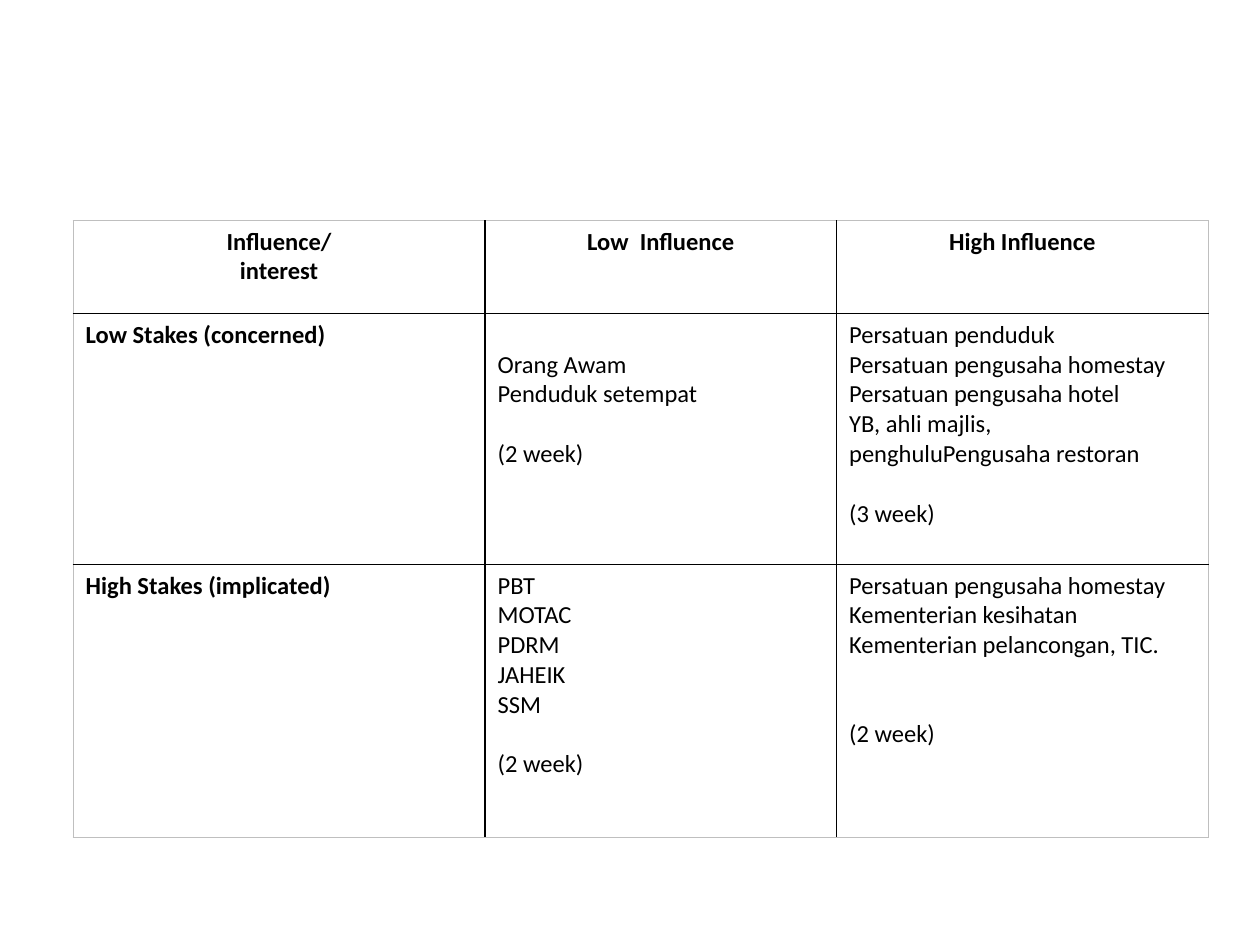
from lxml import etree
from pptx import Presentation
from pptx import util as u
from pptx.dml.color import RGBColor
from pptx.enum import text
from pptx.oxml import ns

BLACK = RGBColor(0, 0, 0)
GREY = RGBColor(0xBF, 0xBF, 0xBF)
FONT = {"name": "Calibri", "size": u.Pt(14)}
LINE = 17
HANG = u.Inches(0.38)

COLS = [3.27, 2.79, 2.95]
ROWS = [0.74, 1.99, 2.17]
GRID = [
    [["Influence/", "interest"], ["Low  Influence"], ["High Influence"]],
    [
        ["Low Stakes (concerned)"],
        ["Orang Awam", "Penduduk setempat", "(2 week)"],
        ["Persatuan penduduk", "Persatuan pengusaha homestay",
         "Persatuan pengusaha hotel", "YB, ahli majlis,",
         "penghuluPengusaha restoran", "(3 week)"],
    ],
    [
        ["High Stakes (implicated)"],
        ["PBT", "MOTAC", "PDRM", "JAHEIK", "SSM", "(2 week)"],
        ["Persatuan pengusaha homestay", "Kementerian kesihatan",
         "Kementerian pelancongan, TIC.", "(2 week)"],
    ],
]
GAPS = {(1, 1): 1, (1, 2): 1, (2, 1): 1, (2, 2): 2}
DROPS = {(1, 1): 1}


class Deck:
    def __init__(self, wide, high):
        self.prs = Presentation()
        self.prs.slide_width = u.Inches(wide)
        self.prs.slide_height = u.Inches(high)
        self.slide = self.prs.slides.add_slide(self.prs.slide_layouts[6])

    def edge(self, cell, side, outer):
        props = cell._tc.get_or_add_tcPr()
        width = u.Pt(0.5 if outer else 1)
        line = etree.SubElement(props, ns.qn(f"a:ln{side}"), w=str(int(width)))
        fill = etree.SubElement(line, ns.qn("a:solidFill"))
        tint = GREY if outer else BLACK
        etree.SubElement(fill, ns.qn("a:srgbClr"), val=str(tint))

    def label(self, cell, lines, row, col):
        frame = cell.text_frame
        frame.text = "\n".join(lines)
        cell.margin_top = u.Inches(0.05) + u.Pt(LINE * DROPS.get((row, col), 0))
        for para in frame.paragraphs:
            font = para.runs[0].font
            for key, val in {**FONT, "bold": row == 0 or col == 0}.items():
                setattr(font, key, val)
            font.color.rgb = BLACK
            if row == 0:
                para.alignment = text.PP_ALIGN.CENTER
            elif col == 2:
                props = para._p.get_or_add_pPr()
                props.set("marL", str(int(HANG)))
                props.set("indent", str(-int(HANG)))
        if (row, col) in GAPS:
            para.space_before = u.Pt(LINE * GAPS[row, col])

    def table(self, left, top, cols, rows, grid):
        table = self.slide.shapes.add_table(
            len(rows), len(cols), u.Inches(left), u.Inches(top),
            u.Inches(sum(cols)), u.Inches(sum(rows))).table
        table.first_row = table.horz_banding = False
        for item, size in zip(table.columns, cols):
            item.width = u.Inches(size)
        for item, size in zip(table.rows, rows):
            item.height = u.Inches(size)
        for row, cells in enumerate(grid):
            for col, lines in enumerate(cells):
                cell = table.cell(row, col)
                sides = {"L": col == 0, "R": col == len(cols) - 1,
                         "T": row == 0, "B": row == len(rows) - 1}
                for side, outer in sides.items():
                    self.edge(cell, side, outer)
                cell.fill.background()
                self.label(cell, lines, row, col)


def main():
    deck = Deck(10, 7.5)
    deck.table(0.58, 1.75, COLS, ROWS, GRID)
    deck.prs.save("out.pptx")


if __name__ == "__main__":
    main()
